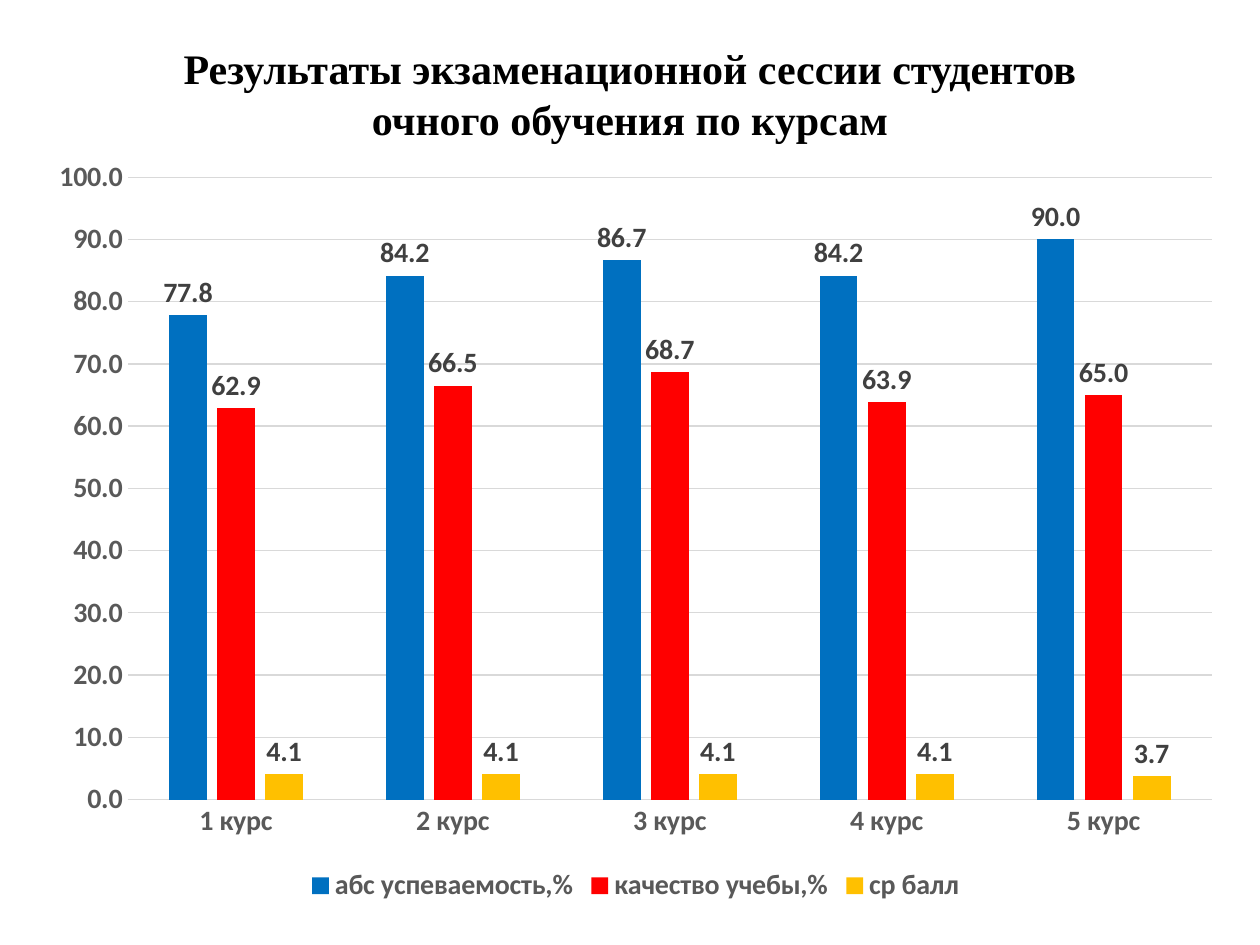
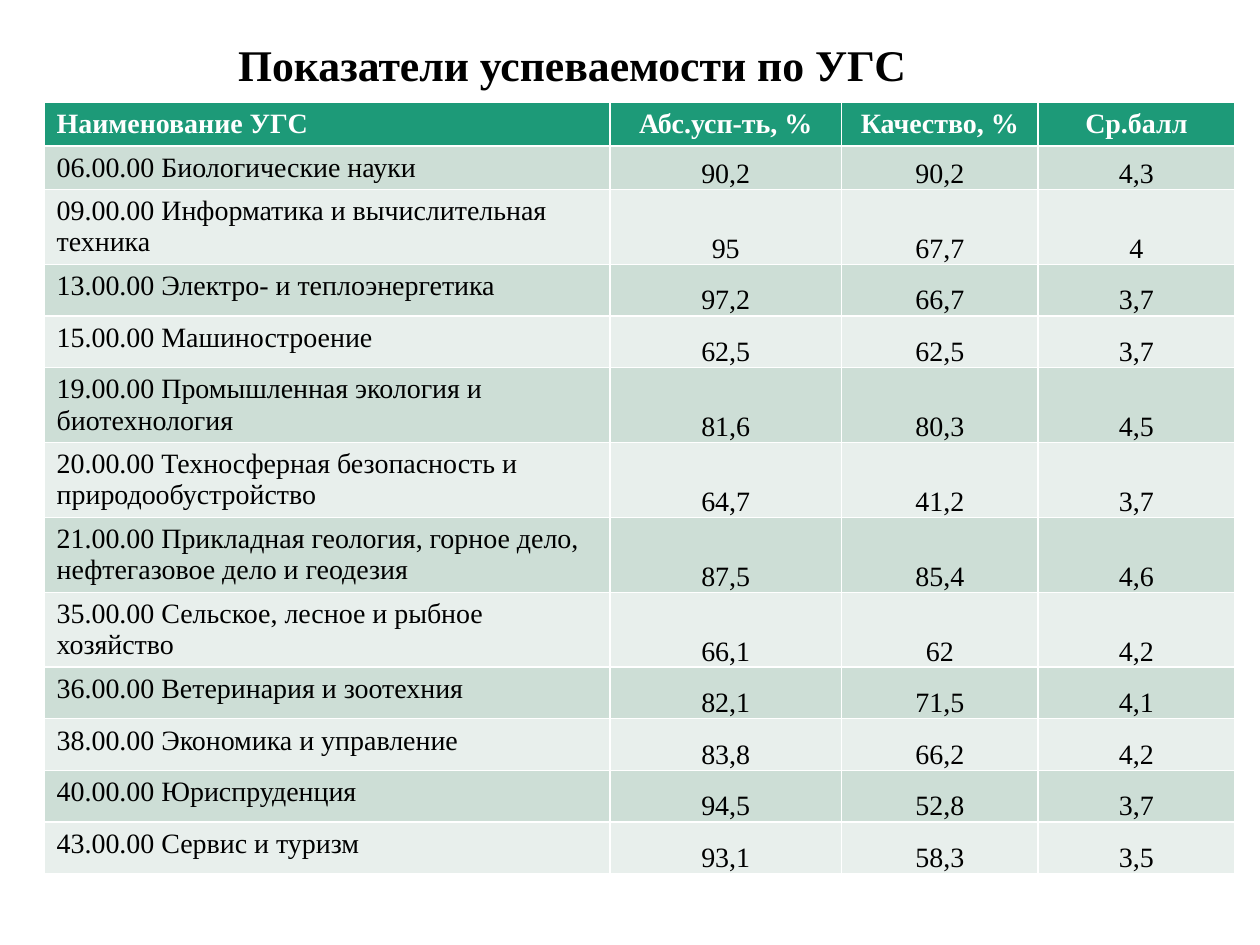
from pptx import Presentation
from pptx import util as u
from pptx.chart.data import CategoryChartData
from pptx.dml.color import RGBColor
from pptx.enum import chart as charts, text

PX = 9144  # EMU per px, 100 px to the inch
SERIF, SANS = "Times New Roman", "Calibri"
BLACK, WHITE = "000000", "FFFFFF"
GRID_GREY, AXIS_GREY, LABEL_GREY = "D9D9D9", "595959", "404040"
HEADER_GREEN, BANDS = "1D9A78", ("CDDED6", "E8EFEC")


def style_font(font, name, size, color, bold):
    font.name, font.size, font.bold = name, u.Pt(size), bold
    font.color.rgb = RGBColor.from_string(color)


def add_titled_page(lines, left, top, width, height, size, anchor):
    page = deck.slides.add_slide(deck.slide_layouts[5])
    title = page.shapes.title
    title.left, title.top = left * PX, top * PX
    title.width, title.height = width * PX, height * PX
    frame = title.text_frame
    frame.word_wrap = True
    frame.auto_size = text.MSO_AUTO_SIZE.NONE
    frame.vertical_anchor = anchor
    for number, line in enumerate(lines):
        para = frame.add_paragraph() if number else frame.paragraphs[0]
        para.alignment = text.PP_ALIGN.CENTER
        span = para.add_run()
        span.text = line
        style_font(span.font, SERIF, size, BLACK, True)
    return page


deck = Presentation()
deck.slide_width, deck.slide_height = 1000 * PX, 750 * PX

# Slide 1: session results by year of study
page = add_titled_page(
    ["Результаты экзаменационной сессии студентов", "очного обучения по курсам"],
    67, 29, 866, 58, 24, text.MSO_ANCHOR.TOP)

results = [
    ("абс успеваемость,%", "0070C0", (77.8, 84.2, 86.7, 84.2, 90)),
    ("качество учебы,%", "FF0000", (62.9, 66.5, 68.7, 63.9, 65)),
    ("ср балл", "FFC000", (4.1, 4.1, 4.1, 4.1, 3.7)),
]
data = CategoryChartData(number_format="0.0")
data.categories = [f"{year} курс" for year in range(1, 6)]
for name, color, values in results:
    data.add_series(name, values)
chart = page.shapes.add_chart(
    charts.XL_CHART_TYPE.COLUMN_CLUSTERED,
    28 * PX, 115 * PX, 953 * PX, 606 * PX, data).chart
style_font(chart.font, SANS, 16, BLACK, True)
chart.has_title = False
chart.has_legend = True
chart.legend.position = charts.XL_LEGEND_POSITION.BOTTOM
chart.legend.include_in_layout = False
style_font(chart.legend.font, SANS, 16, AXIS_GREY, True)

for axis in (chart.category_axis, chart.value_axis):
    axis.major_tick_mark = axis.minor_tick_mark = charts.XL_TICK_MARK.NONE
    style_font(axis.tick_labels.font, SANS, 16, AXIS_GREY, True)
value_axis = chart.value_axis
value_axis.minimum_scale, value_axis.maximum_scale = 0, 100
value_axis.major_unit = 10
value_axis.tick_labels.number_format = "0.0"
value_axis.tick_labels.number_format_is_linked = False
value_axis.format.line.fill.background()
for line in (chart.category_axis.format.line, value_axis.major_gridlines.format.line):
    line.color.rgb = RGBColor.from_string(GRID_GREY)
    line.width = u.Pt(0.75)

plot = chart.plots[0]
plot.vary_by_categories = False
plot.gap_width, plot.overlap = 219, -27
for series, (name, color, values) in zip(plot.series, results):
    series.format.fill.solid()
    series.format.fill.fore_color.rgb = RGBColor.from_string(color)
    labels = series.data_labels
    labels.show_value = True
    labels.position = charts.XL_LABEL_POSITION.OUTSIDE_END
    labels.number_format = "0.0"
    labels.number_format_is_linked = False
    style_font(labels.font, SANS, 16, LABEL_GREY, True)

# Slide 2: results by group of specialities
page = add_titled_page(["Показатели успеваемости по УГС"],
                       20, 22, 868, 58, 25, text.MSO_ANCHOR.MIDDLE)

rows = [
    ("Наименование УГС", "Абс.усп-ть, %", "Качество, %", "Ср.балл"),
    ("06.00.00 Биологические науки", "90,2", "90,2", "4,3"),
    ("09.00.00 Информатика и вычислительная техника", "95", "67,7", "4"),
    ("13.00.00 Электро- и теплоэнергетика", "97,2", "66,7", "3,7"),
    ("15.00.00 Машиностроение", "62,5", "62,5", "3,7"),
    ("19.00.00 Промышленная экология и биотехнология", "81,6", "80,3", "4,5"),
    ("20.00.00 Техносферная безопасность и природообустройство", "64,7", "41,2", "3,7"),
    ("21.00.00 Прикладная геология, горное дело, нефтегазовое дело и геодезия",
     "87,5", "85,4", "4,6"),
    ("35.00.00 Сельское, лесное и рыбное хозяйство", "66,1", "62", "4,2"),
    ("36.00.00 Ветеринария и зоотехния", "82,1", "71,5", "4,1"),
    ("38.00.00 Экономика и управление", "83,8", "66,2", "4,2"),
    ("40.00.00 Юриспруденция", "94,5", "52,8", "3,7"),
    ("43.00.00 Сервис и туризм", "93,1", "58,3", "3,5"),
]
table = page.shapes.add_table(len(rows), 4, 35 * PX, 81 * PX, 945 * PX, 633 * PX).table
for column, width in zip(table.columns, (449, 184, 156, 156)):
    column.width = width * PX
for row_number, row in enumerate(rows):
    is_header = row_number == 0
    # The first three rows grow to fit their text
    table.rows[row_number].height = (15 if row_number < 3 else 41) * PX
    for column_number, value in enumerate(row):
        cell = table.cell(row_number, column_number)
        cell.fill.solid()
        cell.fill.fore_color.rgb = RGBColor.from_string(
            HEADER_GREEN if is_header else BANDS[(row_number - 1) % 2])
        para = cell.text_frame.paragraphs[0]
        if column_number:
            para.alignment = text.PP_ALIGN.CENTER
            cell.vertical_anchor = text.MSO_ANCHOR.MIDDLE if is_header else text.MSO_ANCHOR.BOTTOM
            if not is_header:
                cell.margin_left = cell.margin_right = cell.margin_top = PX
                cell.margin_bottom = 0
        span = para.add_run()
        span.text = value
        style_font(span.font, SERIF, 16, WHITE if is_header else BLACK, is_header)

deck.save("out.pptx")
